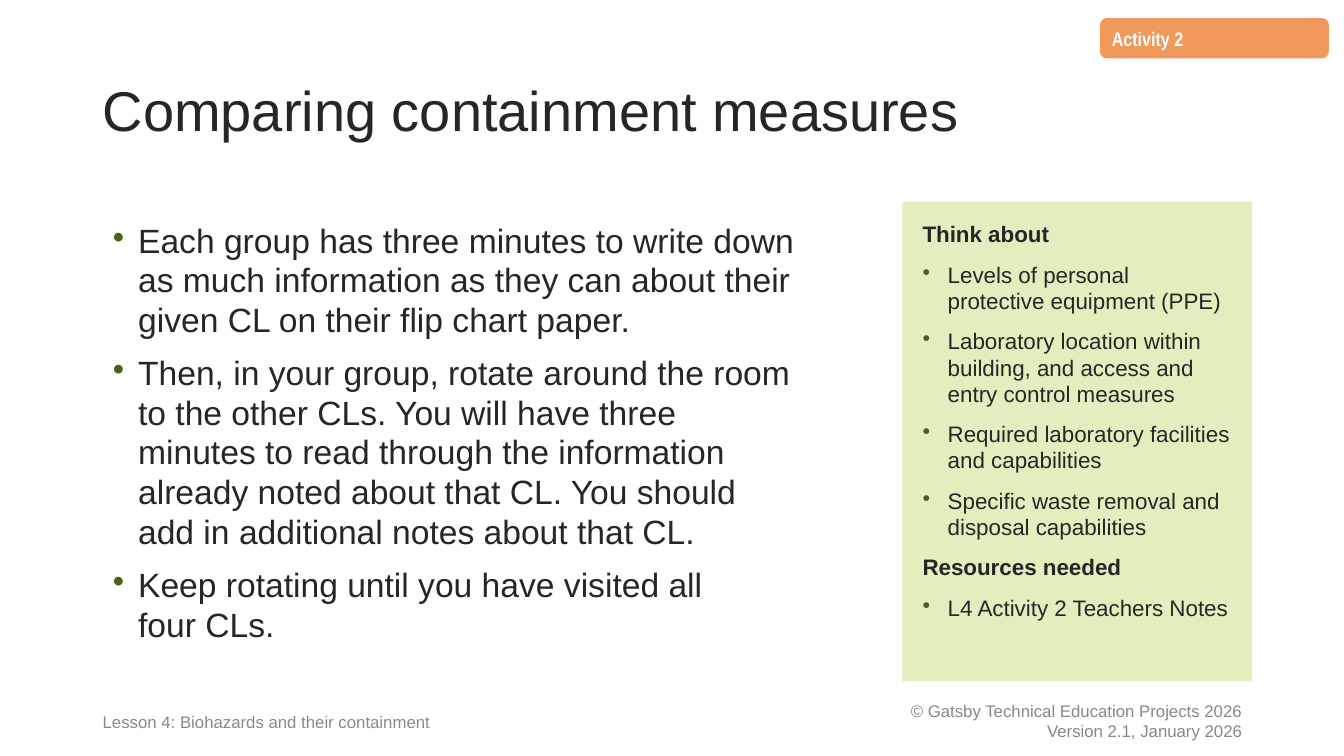
from lxml.etree import SubElement
from pptx import Presentation
from pptx.dml.color import RGBColor
from pptx.enum.shapes import MSO_SHAPE
from pptx.enum.text import MSO_ANCHOR, PP_ALIGN
from pptx.oxml.ns import qn
from pptx.util import Emu, Pt

PX = 9144
COLOURS = {
    "page": "FFFFFF",
    "ink": "262626",
    "bullet": "466318",
    "activity": "F1995D",
    "think": "E2EEBE",
    "copyright": "888888",
    "lesson": "898989",
}
INSTRUCTIONS = [
    "Each group has three minutes to write down\nas much information as they can about their "
    "given CL on their flip chart paper.",
    "Then, in your group, rotate around the room\nto the other CLs. You will have three\n"
    "minutes to read through the information\nalready noted about that CL. You should\n"
    "add in additional notes about that CL.",
    "Keep rotating until you have visited all\nfour CLs.",
]
PROMPTS = {
    "Think about": [
        "Levels of personal protective equipment (PPE)",
        "Laboratory location within building, and access and entry control measures",
        "Required laboratory facilities and capabilities",
        "Specific waste removal and disposal capabilities",
    ],
    "Resources needed": ["L4 Activity 2 Teachers Notes"],
}


def px(length):
    """Turn px into EMU."""
    return Emu(length * PX)


def rgb(name):
    """Look up a colour by name."""
    return RGBColor.from_string(COLOURS[name])


def set_all(target, values):
    """Set every attribute in a dict of format values."""
    for key, value in values.items():
        setattr(target, key, value)


def add_bullet(paragraph):
    """Give a paragraph a hanging green bullet."""
    properties = paragraph._p.get_or_add_pPr()
    properties.set("marL", str(px(25)))
    properties.set("indent", str(-px(25)))
    colour = SubElement(properties, qn("a:buClr"))
    SubElement(colour, qn("a:srgbClr")).set("val", COLOURS["bullet"])
    SubElement(properties, qn("a:buChar")).set("char", "•")


def write(shape, entries, size, ink="ink", face="Arial", inset=(10, 5),
          anchor=MSO_ANCHOR.MIDDLE, align=PP_ALIGN.LEFT, leading=1.0, gap=0):
    """Fill a shape with (text, bold, bulleted) paragraphs."""
    across, down = map(px, inset)
    frame = shape.text_frame
    set_all(frame, {"word_wrap": True, "vertical_anchor": anchor,
                    "margin_left": across, "margin_right": across,
                    "margin_top": down, "margin_bottom": down})
    for index, (text, bold, bulleted) in enumerate(entries):
        paragraph = frame.add_paragraph() if index else frame.paragraphs[0]
        paragraph.text = text
        set_all(paragraph, {"alignment": align, "line_spacing": leading,
                            "space_before": Pt(gap if index else 0)})
        if bulleted:
            add_bullet(paragraph)
        for run in paragraph.runs:
            set_all(run.font, {"name": face, "size": Pt(size), "bold": bold})
            run.font.color.rgb = rgb(ink)


def add_line_text(slide, box, lines, size, **style):
    """Place plain lines of text in a box."""
    label = slide.shapes.add_textbox(*map(px, box))
    write(label, [(line, False, False) for line in lines], size, **style)


def add_panel(slide, box, fill, entries, size, preset=MSO_SHAPE.RECTANGLE, **style):
    """Place a filled panel with text starting at its top."""
    panel = slide.shapes.add_shape(preset, *map(px, box))
    panel.shadow.inherit = False
    panel.fill.solid()
    panel.fill.fore_color.rgb = rgb(fill)
    panel.line.fill.background()
    write(panel, entries, size, anchor=MSO_ANCHOR.TOP, **style)


def add_header(slide, box):
    """Place the activity tag and the title."""
    left, top, width, height = box
    add_panel(slide, (1091, 18, 227, 40), "activity", [("Activity 2", True, False)], 14,
              MSO_SHAPE.FLOWCHART_ALTERNATE_PROCESS, ink="page", face="Arial Narrow",
              leading=1.08)
    add_line_text(slide, (left, top, width, height), ["Comparing containment measures"], 40,
                  leading=0.9)


def add_body(slide, box):
    """Place the instructions and, to their right, the prompts."""
    left, top, width, height = box
    prompts_width = 347
    instructions_width = width - prompts_width - 28
    style = {"inset": (20, 20), "leading": 0.98, "gap": 10}
    steps = [(step, False, True) for step in INSTRUCTIONS]
    add_panel(slide, (left, top, instructions_width, height), "page", steps, 24, **style)
    prompts = []
    for heading, points in PROMPTS.items():
        prompts.append((heading, True, False))
        prompts += [(point, False, True) for point in points]
    add_panel(slide, (left + width - prompts_width, top, prompts_width, height), "think",
              prompts, 16, **style)


def add_footer(slide, box):
    """Place the lesson name at the left and the copyright at the right."""
    left, top, width, height = box
    copyright_width = 450
    add_line_text(slide, (left + width - copyright_width, top, copyright_width, height),
                  ["© Gatsby Technical Education Projects 2026", "Version 2.1, January 2026"],
                  12, ink="copyright", align=PP_ALIGN.RIGHT)
    add_line_text(slide, (left, top, 460, height),
                  ["Lesson 4: Biohazards and their containment"], 12, ink="lesson",
                  leading=1.08)


def main():
    """Build and save the slide."""
    deck = Presentation()
    set_all(deck, {"slide_width": px(1333), "slide_height": px(750)})
    slide = deck.slides.add_slide(deck.slide_layouts[6])
    add_header(slide, (92, 40, 1150, 145))
    add_body(slide, (92, 200, 1150, 476))
    add_footer(slide, (92, 695, 1150, 40))
    deck.save("out.pptx")


if __name__ == "__main__":
    main()
